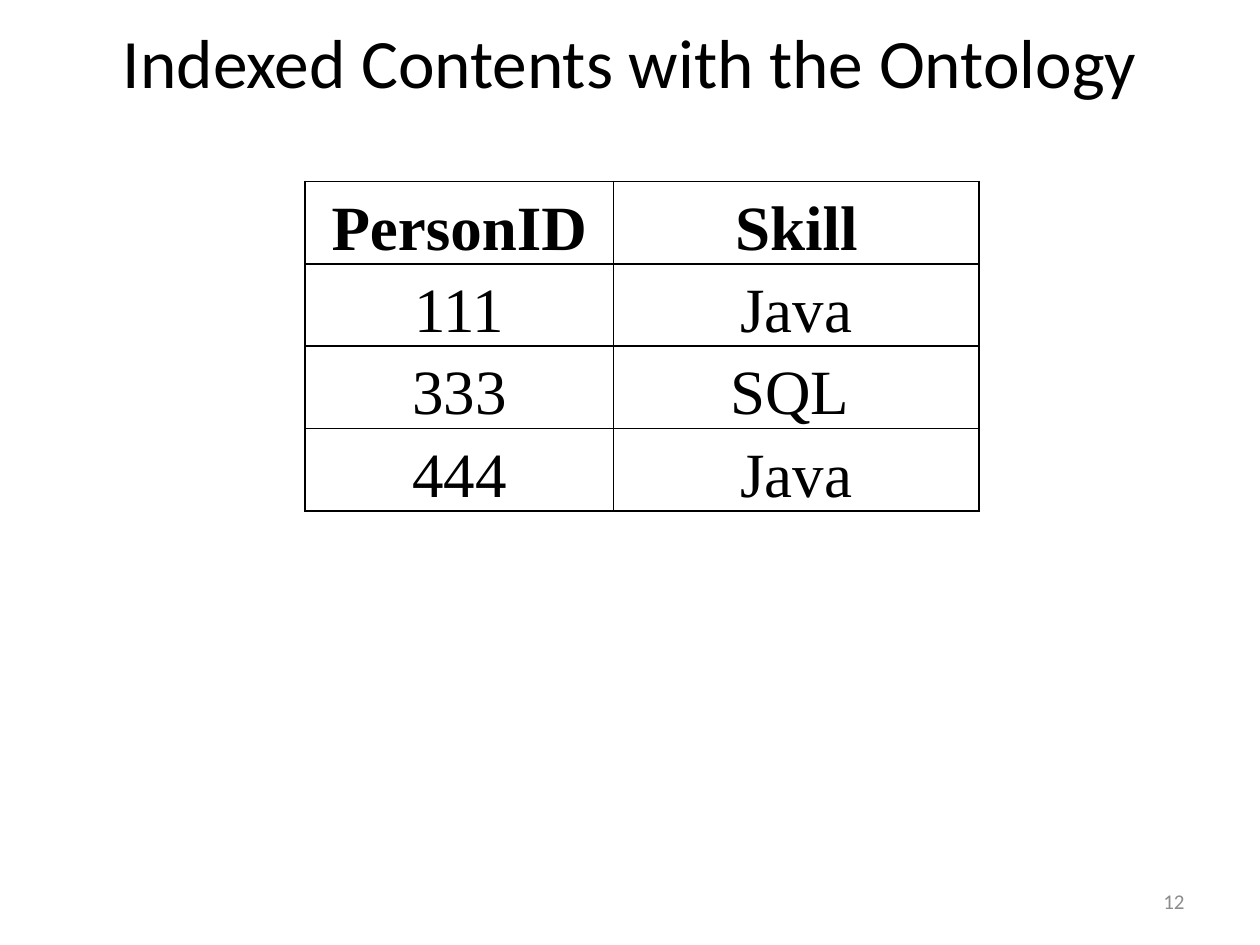
from dataclasses import dataclass

from lxml import etree
from pptx import Presentation
from pptx import util as u
from pptx.dml.color import RGBColor
from pptx.enum import text
from pptx.oxml import ns

COLUMNS, ROWS = 100, 75
CENTER, RIGHT = text.PP_ALIGN.CENTER, text.PP_ALIGN.RIGHT


@dataclass(frozen=True)
class Theme:
    ink: str = "000000"
    muted: str = "8C8C8C"
    paper: str = "FFFFFF"
    heading_font: str = "Calibri"
    table_font: str = "Times New Roman"
    title_size: float = 39.6
    table_size: float = 36
    number_size: float = 12
    border: float = 1


class SlideBuilder:
    def __init__(self, deck, theme):
        self.theme = theme
        self.column = deck.slide_width / COLUMNS
        self.row = deck.slide_height / ROWS
        self.slide = deck.slides.add_slide(deck.slide_layouts[5])
        background = self.slide.background.fill
        background.solid()
        background.fore_color.rgb = RGBColor.from_string(theme.paper)

    def area(self, left, top, width, height):
        """Turn grid columns and rows into slide lengths."""
        return (u.Emu(round(left * self.column)), u.Emu(round(top * self.row)),
                u.Emu(round(width * self.column)), u.Emu(round(height * self.row)))

    def set_text(self, frame, words, font, size, color, align, bold=False):
        frame.text = words
        para = frame.paragraphs[0]
        para.alignment = align
        for span in para.runs:
            span.font.name = font
            span.font.size = u.Pt(size)
            span.font.bold = bold
            span.font.color.rgb = RGBColor.from_string(color)

    def title(self, words, *place):
        box = self.slide.shapes.title
        box.left, box.top, box.width, box.height = self.area(*place)
        box.text_frame.vertical_anchor = text.MSO_ANCHOR.MIDDLE
        self.set_text(box.text_frame, words, self.theme.heading_font,
                      self.theme.title_size, self.theme.ink, CENTER)

    def page_number(self, number, *place):
        frame = self.slide.shapes.add_textbox(*self.area(*place)).text_frame
        frame.word_wrap = True
        frame.vertical_anchor = text.MSO_ANCHOR.MIDDLE
        self.set_text(frame, number, self.theme.heading_font,
                      self.theme.number_size, self.theme.muted, RIGHT)

    def table(self, records, left, top, widths, row_height):
        place = self.area(left, top, sum(widths), row_height * len(records))
        table = self.slide.shapes.add_table(len(records), len(widths), *place).table
        table.first_row = table.horz_banding = False
        for column, width in zip(table.columns, widths):
            column.width = u.Emu(round(width * self.column))
        for r, record in enumerate(records):
            for c, words in enumerate(record):
                self.cell(table.cell(r, c), words, bold=r == 0)

    def cell(self, cell, words, bold):
        cell.margin_left = cell.margin_right = u.Inches(0.07)
        cell.margin_top, cell.margin_bottom = u.Inches(0.1), 0
        self.outline(cell)
        cell.fill.background()
        self.set_text(cell.text_frame, words, self.theme.table_font,
                      self.theme.table_size, self.theme.ink, CENTER, bold)

    def outline(self, cell):
        properties = cell._tc.get_or_add_tcPr()
        for side in ("lnL", "lnR", "lnT", "lnB"):
            line = etree.SubElement(properties, ns.qn(f"a:{side}"),
                                    w=str(u.Pt(self.theme.border)))
            fill = etree.SubElement(line, ns.qn("a:solidFill"))
            etree.SubElement(fill, ns.qn("a:srgbClr"), val=self.theme.ink)


def main():
    deck = Presentation()
    deck.slide_width, deck.slide_height = u.Inches(10), u.Inches(7.5)
    page = SlideBuilder(deck, Theme())
    page.title("Indexed Contents with the Ontology", 5, 0.1, 90, 9.4)
    skills = [("PersonID", "Skill"), ("111", "Java"), ("333", "SQL "), ("444", "Java")]
    page.table(skills, left=24.2, top=14.4, widths=(24.5, 29), row_height=6.5)
    page.page_number("12", 71.7, 69.5, 23.3, 4)
    deck.save("out.pptx")


if __name__ == "__main__":
    main()
